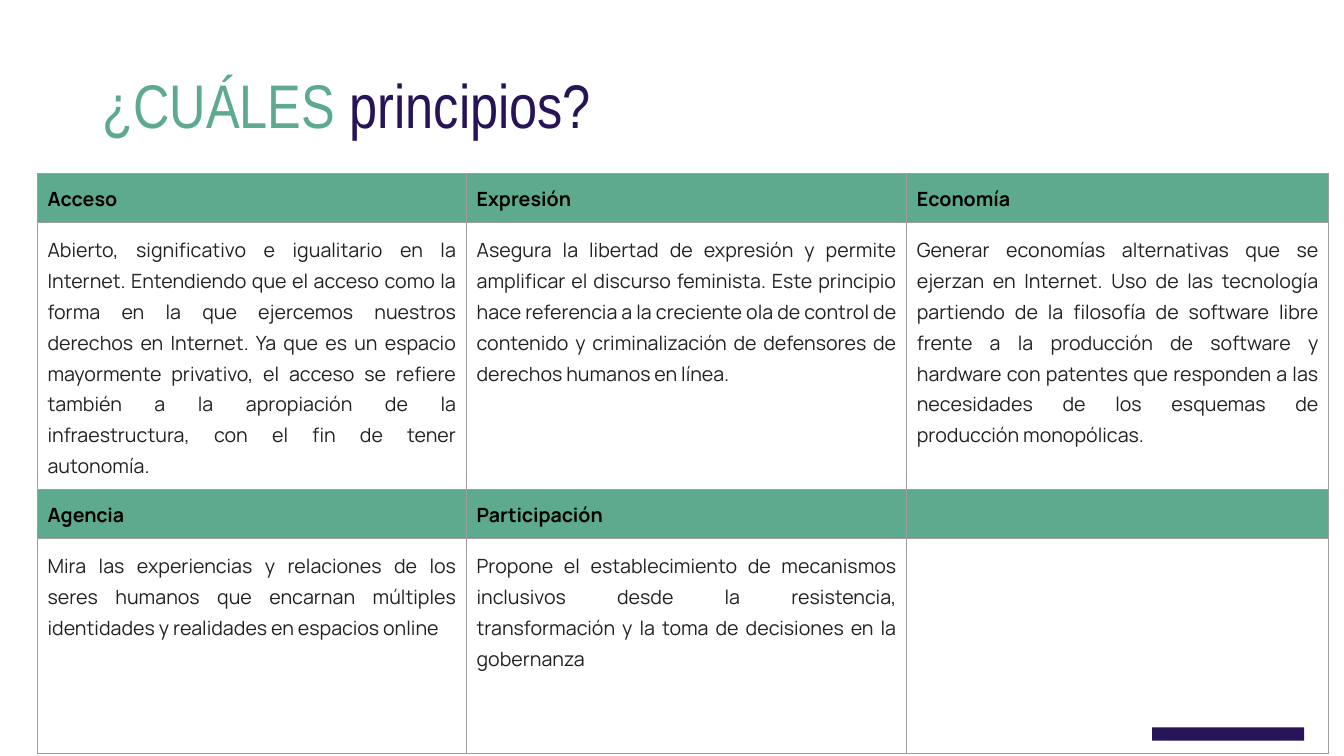
from dataclasses import dataclass

from lxml.etree import SubElement
from pptx import Presentation
from pptx.dml.color import RGBColor as Rgb
from pptx.enum.shapes import MSO_SHAPE as Shape
from pptx.enum.text import MSO_ANCHOR as Anchor
from pptx.enum.text import MSO_AUTO_SIZE as AutoSize
from pptx.enum.text import PP_ALIGN as Align
from pptx.oxml.ns import qn
from pptx.util import Pt

COLOURS = {
    "green": "5EAA8F",
    "purple": "271357",
    "heading": "000000",
    "body": "222222",
    "border": "9E9E9E",
}
CELL_MARGIN = 7.2
BORDER_WIDTH = 0.75
COLUMN_WIDTHS = (306.5, 314.5, 301.5)
ROW_HEIGHTS = (35, 190.5, 35, 153)


@dataclass
class Principle:
    name: str = ""
    meaning: str = ""


@dataclass
class TitlePart:
    text: str
    colour: str


TITLE = (TitlePart("¿CUÁLES ", "green"), TitlePart("principios?", "purple"))

PRINCIPLES = (
    (
        Principle(
            "Acceso",
            "Abierto, significativo e igualitario en la Internet. Entendiendo que el "
            "acceso como la forma en la que ejercemos nuestros derechos en Internet. "
            "Ya que es un espacio mayormente privativo, el acceso se refiere también "
            "a la apropiación de la infraestructura, con el fin de tener autonomía.",
        ),
        Principle(
            "Expresión",
            "Asegura la libertad de expresión y permite amplificar el discurso "
            "feminista. Este principio hace referencia a la creciente ola de control "
            "de contenido y criminalización de defensores de derechos humanos en línea.",
        ),
        Principle(
            "Economía",
            "Generar economías alternativas que se ejerzan en Internet. Uso de las "
            "tecnología partiendo de la filosofía de software libre frente a la "
            "producción de software y hardware con patentes que responden a las "
            "necesidades de los esquemas de producción monopólicas.",
        ),
    ),
    (
        Principle(
            "Agencia",
            "Mira las experiencias y relaciones de los seres humanos que encarnan "
            "múltiples identidades y realidades en espacios online",
        ),
        Principle(
            "Participación",
            "Propone el establecimiento de mecanismos inclusivos desde la "
            "resistencia, transformación y la toma de decisiones en la gobernanza",
        ),
        Principle(),
    ),
)

HEADING_FORMAT = {"alignment": Align.LEFT, "line_spacing": 1.08}
BODY_FORMAT = {"alignment": Align.JUSTIFY, "line_spacing": 1.15}


def colour(name: str) -> Rgb:
    return Rgb.from_string(COLOURS[name])


def apply(target, values: dict) -> None:
    for name, value in values.items():
        setattr(target, name, value)


def add_borders(cell) -> None:
    properties = cell._tc.get_or_add_tcPr()
    for position, side in enumerate(("a:lnL", "a:lnR", "a:lnT", "a:lnB")):
        line = SubElement(properties, qn(side), w=str(Pt(BORDER_WIDTH)))
        fill = SubElement(line, qn("a:solidFill"))
        SubElement(fill, qn("a:srgbClr"), val=COLOURS["border"])
        properties.remove(line)
        properties.insert(position, line)  # lines come before the cell fill


def fill_cell(cell, text: str, is_heading: bool) -> None:
    apply(cell, {f"margin_{side}": Pt(CELL_MARGIN)
                 for side in ("left", "right", "top", "bottom")})
    if is_heading:
        cell.fill.solid()
        cell.fill.fore_color.rgb = colour("green")
    else:
        cell.fill.background()
    add_borders(cell)
    para = cell.text_frame.paragraphs[0]
    para.text = text
    apply(para, HEADING_FORMAT if is_heading else BODY_FORMAT)
    apply(para.font, {"name": "Manrope", "size": Pt(14), "bold": is_heading})
    para.font.color.rgb = colour("heading" if is_heading else "body")


def add_title(page) -> None:
    box = page.shapes.title
    apply(box, {"left": Pt(66), "top": Pt(25), "width": Pt(828), "height": Pt(104.5)})
    apply(box.text_frame, {"vertical_anchor": Anchor.MIDDLE, "word_wrap": True,
                           "auto_size": AutoSize.NONE})
    para = box.text_frame.paragraphs[0]
    apply(para, {"alignment": Align.LEFT, "line_spacing": 0.9})
    for part in TITLE:
        span = para.add_run()
        span.text = part.text
        apply(span.font, {"name": "Arial Narrow", "size": Pt(44)})
        span.font.color.rgb = colour(part.colour)


def add_accent_bar(page) -> None:
    bar = page.shapes.add_shape(Shape.RECTANGLE, Pt(823), Pt(519.5), Pt(108.5), Pt(9.5))
    bar.shadow.inherit = False
    bar.fill.solid()
    bar.fill.fore_color.rgb = colour("purple")
    bar.line.fill.background()


def add_principles_table(page) -> None:
    table = page.shapes.add_table(
        len(ROW_HEIGHTS), len(COLUMN_WIDTHS), Pt(26.75), Pt(123.75),
        Pt(sum(COLUMN_WIDTHS)), Pt(sum(ROW_HEIGHTS))).table
    apply(table, {"first_row": False, "horz_banding": False})
    for column, width in zip(table.columns, COLUMN_WIDTHS):
        column.width = Pt(width)
    for row, height in zip(table.rows, ROW_HEIGHTS):
        row.height = Pt(height)
    # Each group takes a heading row and a body row
    for group, principles in enumerate(PRINCIPLES):
        for column, principle in enumerate(principles):
            fill_cell(table.cell(2 * group, column), principle.name, True)
            fill_cell(table.cell(2 * group + 1, column), principle.meaning, False)


def main() -> None:
    deck = Presentation()
    apply(deck, {"slide_width": Pt(960), "slide_height": Pt(540)})
    page = deck.slides.add_slide(deck.slide_layouts.get_by_name("Title Only"))
    add_title(page)
    add_accent_bar(page)
    add_principles_table(page)
    deck.save("out.pptx")


if __name__ == "__main__":
    main()
